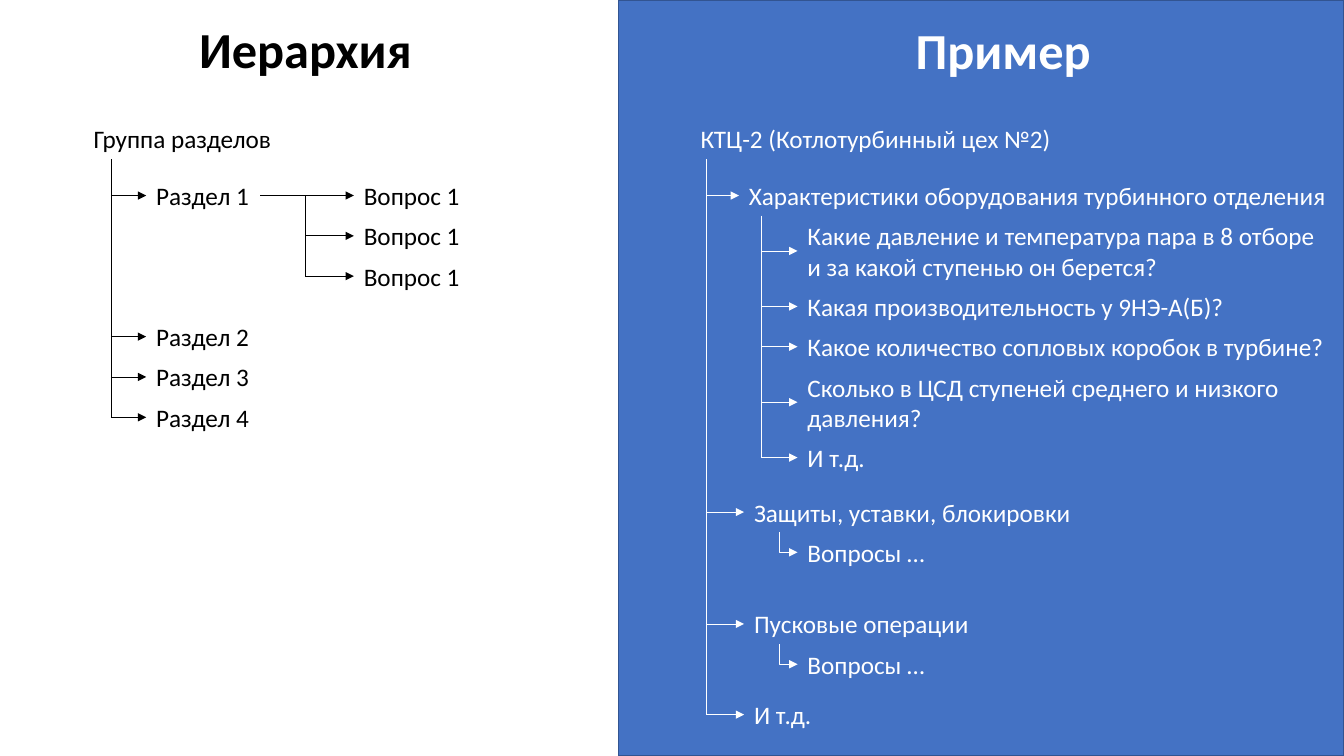
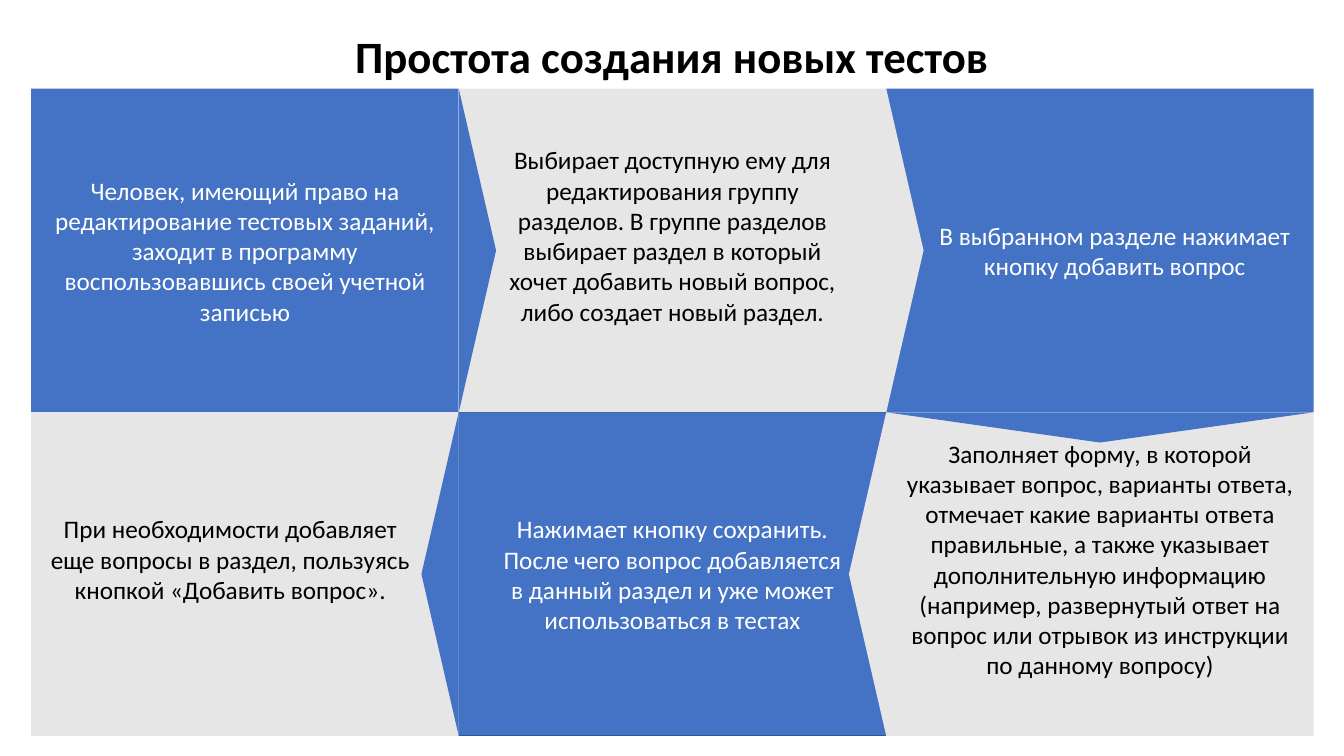
from dataclasses import dataclass

import lxml.etree
import pptx
import pptx.dml.color
import pptx.enum.shapes
import pptx.enum.text
import pptx.oxml.ns
import pptx.util

Inches = pptx.util.Inches
Pt = pptx.util.Pt
Shapes = pptx.enum.shapes.MSO_SHAPE
Connectors = pptx.enum.shapes.MSO_CONNECTOR
Align = pptx.enum.text.PP_ALIGN
Anchor = pptx.enum.text.MSO_ANCHOR
qn = pptx.oxml.ns.qn

WIDTH, HEIGHT = 13.33, 7.5
LINE_HEIGHT = 0.3
INSET_X, INSET_Y = 0.1, 0.05


@dataclass(frozen=True)
class Theme:
    font: str = "Calibri"
    blue: str = "4472C4"
    outline: str = "325491"
    grey: str = "E7E6E6"
    black: str = "000000"
    white: str = "FFFFFF"
    panel_title: int = 36
    slide_title: int = 32
    body: int = 18


THEME = Theme()


@dataclass(frozen=True)
class Panel:
    """One half of the hierarchy slide: its ink colour and right edge."""
    ink: str
    right: float


@dataclass(frozen=True)
class Item:
    """A tree label; gap is the room left above it."""
    text: str
    lines: int = 1
    gap: float = 0
    indent: float = 0

    @property
    def height(self):
        return self.lines * LINE_HEIGHT + 2 * INSET_Y


@dataclass(frozen=True)
class Step:
    text: str
    column: int
    row: int
    fill: str
    left_inset: float = INSET_X
    right_inset: float = INSET_X
    outlined: bool = False


def rgb(value):
    return pptx.dml.color.RGBColor.from_string(value)


def write(shape, text, size, color, align=Align.LEFT, bold=False):
    frame = shape.text_frame
    frame.word_wrap = True
    paragraph = frame.paragraphs[0]
    paragraph.text = text
    paragraph.alignment = align
    font = paragraph.font
    font.name, font.size, font.bold = THEME.font, Pt(size), bold
    font.color.rgb = rgb(color)


def add_text(slide, left, top, width, height, text, size, color, **style):
    box = slide.shapes.add_textbox(Inches(left), Inches(top), Inches(width), Inches(height))
    write(box, text, size, color, **style)


def add_title(slide, center, top, text, size, color=THEME.black):
    width = WIDTH / 2
    add_text(slide, center - width / 2, top, width, size / 50, text, size, color,
             align=Align.CENTER, bold=True)


def add_block(slide, kind, left, top, width, height, fill, outlined=False):
    shape = slide.shapes.add_shape(kind, Inches(left), Inches(top), Inches(width), Inches(height))
    shape.shadow.inherit = False
    shape.fill.solid()
    shape.fill.fore_color.rgb = rgb(fill)
    if outlined:
        shape.line.color.rgb = rgb(THEME.outline)
        shape.line.width = Pt(1)
    else:
        shape.line.fill.background()
    return shape


def add_line(slide, x1, y1, x2, y2, color, arrow=False, kind=Connectors.STRAIGHT):
    line = slide.shapes.add_connector(kind, Inches(x1), Inches(y1), Inches(x2), Inches(y2))
    line.line.color.rgb = rgb(color)
    line.line.width = Pt(0.5)
    properties = line.element.spPr
    if arrow:
        lxml.etree.SubElement(properties.find(qn("a:ln")), qn("a:tailEnd"), type="triangle")
    lxml.etree.SubElement(properties, qn("a:effectLst"))
    return line


def add_elbow(slide, x1, y1, x2, y2, color):
    """Draw an arrow that goes down, then right: a turned and mirrored bentConnector2."""
    center_x, center_y = (x1 + x2) / 2, (y1 + y2) / 2
    half_width, half_height = (y2 - y1) / 2, (x2 - x1) / 2
    elbow = add_line(slide, center_x - half_width, center_y - half_height,
                     center_x + half_width, center_y + half_height,
                     color, arrow=True, kind=Connectors.ELBOW)
    properties = elbow.element.spPr
    properties.find(qn("a:prstGeom")).set("prst", "bentConnector2")
    transform = properties.find(qn("a:xfrm"))
    transform.set("rot", str(270 * 60000))
    transform.set("flipH", "1")


def add_label(slide, panel, left, top, item):
    margin = 0.17 if item.lines > 1 else 0
    add_text(slide, left, top, panel.right - left - margin, item.height,
             item.text, THEME.body, panel.ink)


def add_branch(slide, panel, spine, spine_top, left, top, items):
    """Stack labels beside a spine with an arrow to each; return their bottom edges."""
    bottoms = []
    for item in items:
        top += item.gap
        middle = top + item.height / 2
        add_label(slide, panel, left + item.indent, top, item)
        add_line(slide, spine, middle, left + item.indent, middle, panel.ink, arrow=True)
        top += item.height
        bottoms.append(top)
    add_line(slide, spine, spine_top, spine, middle, panel.ink)
    return bottoms


def build_hierarchy(slide):
    split = WIDTH * 0.46
    root_top, first_top = 1.17, 1.74
    spine_top, first_middle = 1.58, 1.94
    outline, example = Panel(THEME.black, split), Panel(THEME.white, WIDTH)

    add_block(slide, Shapes.RECTANGLE, split, 0, WIDTH - split, HEIGHT, THEME.blue, outlined=True)
    add_title(slide, 3.03, 0.13, "Иерархия", THEME.panel_title)
    add_title(slide, 9.95, 0.14, "Пример", THEME.panel_title, THEME.white)

    add_label(slide, outline, 0.83, root_top, Item("Группа разделов"))
    add_branch(slide, outline, 1.1, spine_top, 1.45, first_top, [
        Item("Раздел 1"),
        Item("Раздел 2", gap=1),
        Item("Раздел 3"),
        Item("Раздел 4"),
    ])
    add_line(slide, 2.58, first_middle, 3.03, first_middle, outline.ink)
    add_branch(slide, outline, 3.03, first_middle, 3.51, first_top, [Item("Вопрос 1")] * 3)

    add_label(slide, example, 6.85, root_top, Item("КТЦ-2 (Котлотурбинный цех №2)"))
    sections = add_branch(slide, example, 7.01, spine_top, 7.38, first_top, [
        Item("Характеристики оборудования турбинного отделения", indent=-0.05),
        Item("Защиты, уставки, блокировки", gap=2.74),
        Item("Пусковые операции", gap=0.71),
        Item("И т.д.", gap=0.5),
    ])
    question_left = 7.91
    add_branch(slide, example, 7.55, sections[0], question_left, sections[0], [
        Item("Какие давление и температура пара в 8 отборе и за какой ступенью он берется?", lines=2),
        Item("Какая производительность у 9НЭ-А(Б)?"),
        Item("Какое количество сопловых коробок в турбине?"),
        Item("Сколько в ЦСД ступеней среднего и низкого давления?", lines=2),
        Item("И т.д."),
    ])
    questions = Item("Вопросы …")
    for bottom in sections[1:3]:
        add_label(slide, example, question_left, bottom, questions)
        add_elbow(slide, 7.73, bottom, question_left, bottom + questions.height / 2, example.ink)


GRID_LEFT, GRID_TOP = 0.31, 0.88
CELL_WIDTH, CELL_HEIGHT = 4.24, 3.21
WIDE_INSET = 0.39

STEPS = [
    Step("Человек, имеющий право на редактирование тестовых заданий, заходит в программу "
         "воспользовавшись своей учетной записью", 0, 0, THEME.blue),
    Step("В выбранном разделе нажимает кнопку добавить вопрос", 2, 0, THEME.blue,
         left_inset=WIDE_INSET),
    Step("Нажимает кнопку сохранить. После чего вопрос добавляется в данный раздел и уже может "
         "использоваться в тестах", 1, 1, THEME.blue, WIDE_INSET, WIDE_INSET, outlined=True),
    Step("Выбирает доступную ему для редактирования группу разделов. В группе разделов выбирает "
         "раздел в который хочет добавить новый вопрос, либо создает новый раздел.",
         1, 0, THEME.grey, WIDE_INSET, WIDE_INSET),
    Step("Заполняет форму, в которой указывает вопрос, варианты ответа, отмечает какие варианты "
         "ответа правильные, а также указывает дополнительную информацию (например, развернутый "
         "ответ на вопрос или отрывок из инструкции по данному вопросу)", 2, 1, THEME.grey),
    Step("При необходимости добавляет еще вопросы в раздел, пользуясь кнопкой «Добавить вопрос».",
         0, 1, THEME.grey, right_inset=WIDE_INSET),
]


def column_left(column):
    return GRID_LEFT + column * CELL_WIDTH


def row_top(row):
    return GRID_TOP + row * CELL_HEIGHT


def add_step(slide, step):
    cell = add_block(slide, Shapes.RECTANGLE, column_left(step.column), row_top(step.row),
                     CELL_WIDTH, CELL_HEIGHT, step.fill, step.outlined)
    on_grey = step.fill == THEME.grey
    write(cell, step.text, THEME.body, THEME.black if on_grey else THEME.white, Align.CENTER)
    frame = cell.text_frame
    frame.vertical_anchor = Anchor.MIDDLE
    frame.margin_left, frame.margin_right = Inches(step.left_inset), Inches(step.right_inset)
    frame.margin_top = Inches(INSET_Y)
    frame.margin_bottom = Inches(INSET_Y + (LINE_HEIGHT if on_grey else 0))


def add_pointer(slide, center_x, center_y, base, depth, rotation, fill):
    pointer = add_block(slide, Shapes.ISOSCELES_TRIANGLE, center_x - base / 2,
                        center_y - depth / 2, base, depth, fill)
    pointer.rotation = rotation


def build_steps(slide):
    add_title(slide, WIDTH / 2, 0.24, "Простота создания новых тестов", THEME.slide_title)
    for step in STEPS:
        add_step(slide, step)

    depth, down_depth = 0.37, 0.3
    for column, row, fill in [(1, 0, THEME.blue), (2, 0, THEME.grey),
                              (2, 1, THEME.grey), (1, 1, THEME.blue)]:
        # The upper row runs left to right, the lower row right to left.
        side = 1 if row == 0 else -1
        add_pointer(slide, column_left(column) + side * depth / 2, row_top(row) + CELL_HEIGHT / 2,
                    CELL_HEIGHT, depth, 90 if row == 0 else 270, fill)
    add_pointer(slide, column_left(2.5), row_top(1) + down_depth / 2,
                CELL_WIDTH, down_depth, 180, THEME.blue)


def main():
    presentation = pptx.Presentation()
    presentation.slide_width, presentation.slide_height = Inches(WIDTH), Inches(HEIGHT)
    blank = presentation.slide_layouts[6]
    for build in (build_hierarchy, build_steps):
        build(presentation.slides.add_slide(blank))
    presentation.save("out.pptx")


if __name__ == "__main__":
    main()
